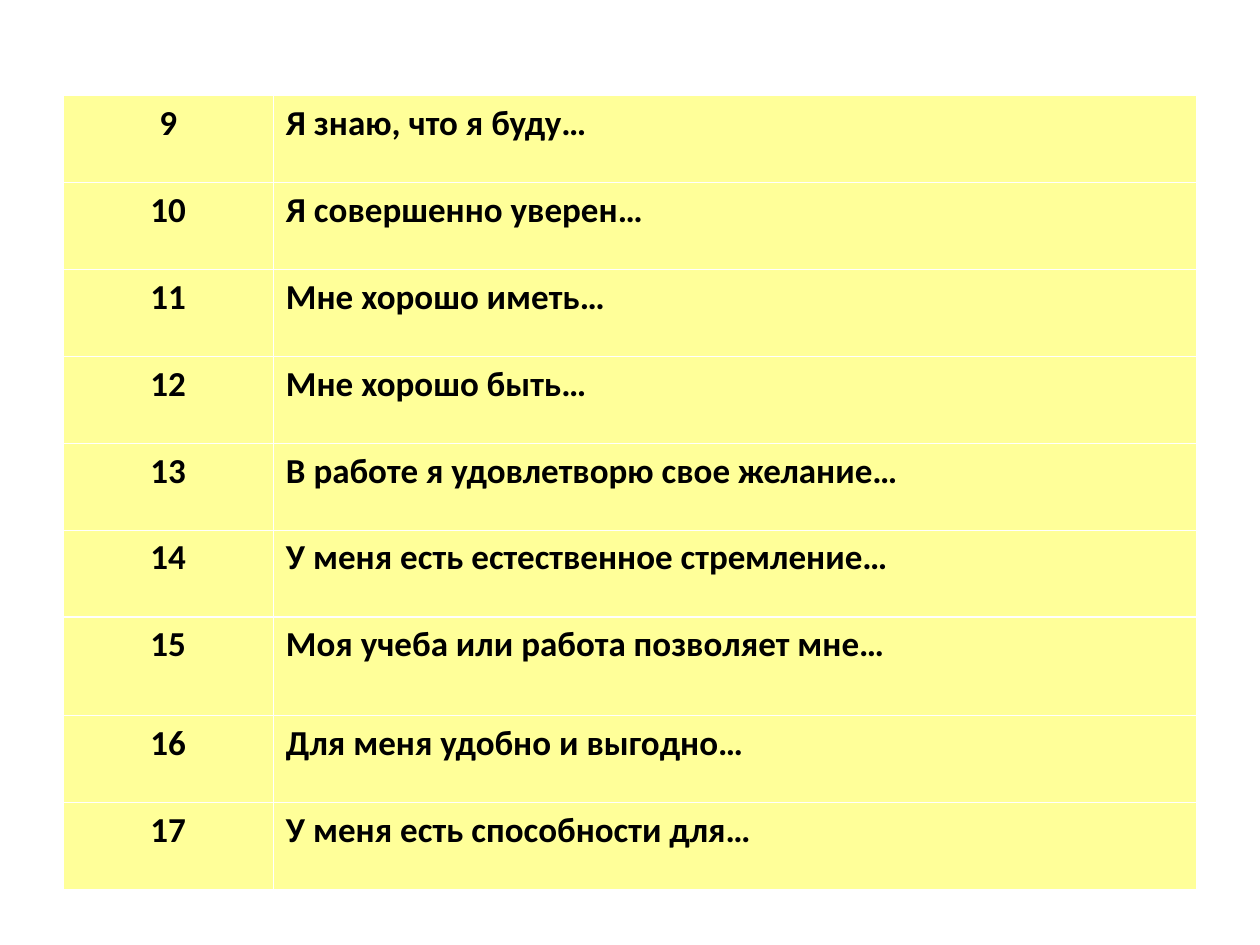
from typing import NamedTuple

from pptx import Presentation
from pptx.dml.color import RGBColor
from pptx.enum.text import PP_ALIGN
from pptx.util import Inches, Pt

CENTER, JUSTIFY = PP_ALIGN.CENTER, PP_ALIGN.JUSTIFY
YELLOW = RGBColor(0xFF, 0xFF, 0x99)
BLACK = RGBColor(0, 0, 0)
FIRST = 9  # number of the first phrase
ROW_H = 0.69


class Phrase(NamedTuple):
    text: str
    height: float = ROW_H


PHRASES = [
    Phrase("Я знаю, что я буду…"),
    Phrase("Я совершенно уверен…"),
    Phrase("Мне хорошо иметь…"),
    Phrase("Мне хорошо быть…"),
    Phrase("В работе я удовлетворю свое желание…"),
    Phrase("У меня есть естественное стремление…"),
    Phrase("Моя учеба или работа позволяет мне…", 0.78),
    Phrase("Для меня удобно и выгодно…"),
    Phrase("У меня есть способности для…"),
]


def fill_cell(cell, text: str, align: PP_ALIGN) -> None:
    cell.fill.solid()
    cell.fill.fore_color.rgb = YELLOW
    cell.text = text
    para = cell.text_frame.paragraphs[0]
    para.alignment = align
    font = para.font
    font.name, font.size, font.bold = "Calibri", Pt(20), True
    font.color.rgb = BLACK


def main() -> None:
    prs = Presentation()
    prs.slide_width, prs.slide_height = Inches(10), Inches(7.5)
    slide = prs.slides.add_slide(prs.slide_layouts[6])

    # Table: the default style draws the white rules, thicker below the first row
    total = sum(phrase.height for phrase in PHRASES)
    table = slide.shapes.add_table(
        len(PHRASES), 2, Inches(0.5), Inches(0.76), Inches(9), Inches(total)
    ).table
    table.columns[0].width = Inches(1.67)
    table.columns[1].width = Inches(7.33)

    # Numbered phrases
    for row, (phrase, line) in enumerate(zip(PHRASES, table.rows)):
        line.height = Inches(phrase.height)
        fill_cell(table.cell(row, 0), str(FIRST + row), CENTER)
        fill_cell(table.cell(row, 1), phrase.text, JUSTIFY)

    prs.save("out.pptx")


if __name__ == "__main__":
    main()
